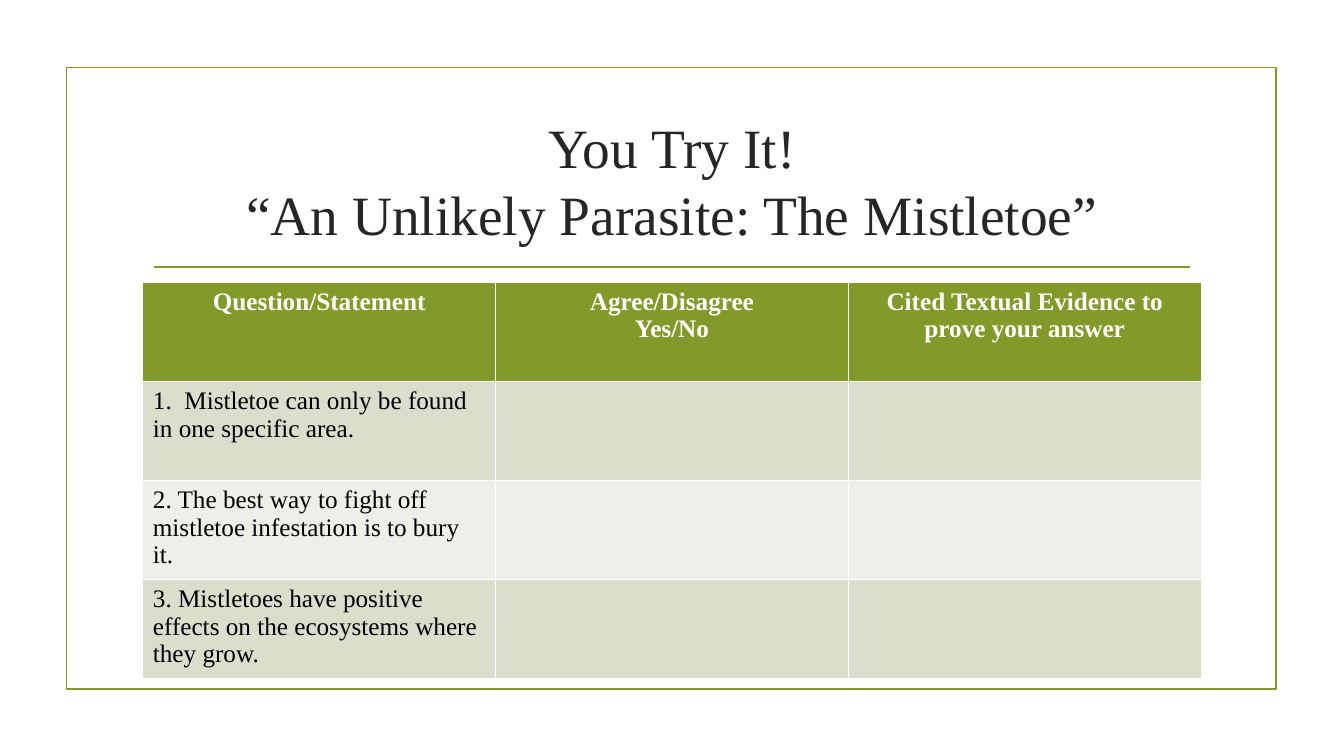
from pptx import Presentation
from pptx.dml.color import RGBColor
from pptx.enum import shapes, text
from pptx.oxml.ns import qn
from pptx.util import Cm, Pt

TITLE = "You Try It!\v“An Unlikely Parasite: The Mistletoe”"
HEADS = [
    "Question/Statement",
    "Agree/Disagree\nYes/No",
    "Cited Textual Evidence to prove your answer",
]
CLAIMS = [
    "1.  Mistletoe can only be found in one specific area.",
    "2. The best way to fight off mistletoe infestation is to bury it.",
    "3. Mistletoes have positive effects on the ecosystems where they grow.",
]
ROWS = [HEADS] + [[claim, "", ""] for claim in CLAIMS]

GREEN = RGBColor(0x83, 0x99, 0x2A)
DARK = RGBColor(0x26, 0x26, 0x26)
WHITE = RGBColor(0xFF, 0xFF, 0xFF)
BLACK = RGBColor(0, 0, 0)
BANDS = [RGBColor(0xED, 0xEF, 0xE8), RGBColor(0xD9, 0xDE, 0xCD)]
FONT = "Times New Roman"
LEFT, WIDTH = Cm(3.6), Cm(26.67)


def style(par, size, color, bold=False, align=text.PP_ALIGN.CENTER):
    """Format one paragraph."""
    par.alignment = align
    font = par.font
    font.name, font.size, font.bold = FONT, Pt(size), bold
    font.color.rgb = color


def outline(shape):
    """Give a shape the thin green line."""
    shape.line.color.rgb = GREEN
    shape.line.width = Pt(1.25)


def add_frame(slide):
    """Draw the border and the rule under the title."""
    frame = slide.shapes.add_shape(
        shapes.MSO_SHAPE.RECTANGLE, Cm(1.68), Cm(1.7), Cm(30.48), Cm(15.67))
    frame.shadow.inherit = False
    frame.fill.background()
    outline(frame)
    rule = slide.shapes.add_connector(
        shapes.MSO_CONNECTOR.STRAIGHT, Cm(3.89), Cm(6.73), Cm(30), Cm(6.73))
    outline(rule)
    props = rule._element.spPr
    props.append(props.makeelement(qn("a:effectLst"), {}))


def add_title(slide):
    """Place and format the title."""
    title = slide.shapes.title
    title.left, title.top, title.width, title.height = (
        LEFT, Cm(2.72), WIDTH, Cm(3.63))
    box = title.text_frame
    box.text = TITLE
    box.auto_size = text.MSO_AUTO_SIZE.NONE
    box.vertical_anchor = text.MSO_ANCHOR.MIDDLE
    style(box.paragraphs[0], 39.6, DARK)


def add_grid(slide):
    """Build the table of claims."""
    grid = slide.shapes.add_table(
        len(ROWS), len(HEADS), LEFT, Cm(7.12), WIDTH, Cm(9.98)).table
    for r, row in enumerate(ROWS):
        for c, words in enumerate(row):
            cell = grid.cell(r, c)
            cell.text = words
            cell.fill.solid()
            cell.fill.fore_color.rgb = BANDS[r % 2] if r else GREEN
            for par in cell.text_frame.paragraphs:
                if r:
                    style(par, 18, BLACK, align=text.PP_ALIGN.LEFT)
                else:
                    style(par, 18, WHITE, bold=True)


def main():
    """Build and save the slide."""
    deck = Presentation()
    deck.slide_width, deck.slide_height = Cm(33.87), Cm(19.05)
    slide = deck.slides.add_slide(deck.slide_layouts[5])
    add_frame(slide)
    add_title(slide)
    add_grid(slide)
    deck.save("out.pptx")


if __name__ == "__main__":
    main()
